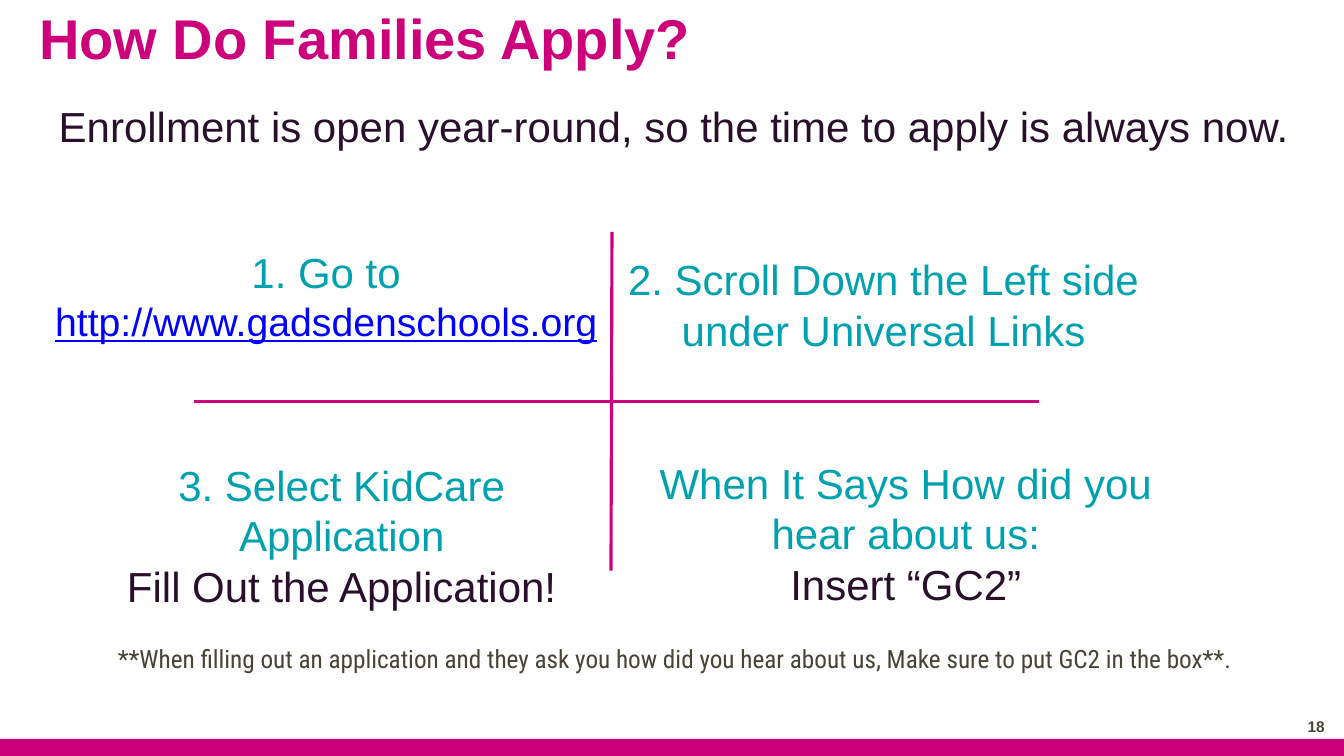
from pptx import Presentation
from pptx.dml.color import RGBColor as RGB
from pptx.enum.shapes import MSO_CONNECTOR as CONN, MSO_SHAPE as SHAPE
from pptx.enum.text import MSO_ANCHOR as ANCHOR, MSO_AUTO_SIZE as AUTO, PP_ALIGN as ALIGN
from pptx.oxml.ns import qn
from pptx.util import Inches, Pt
from lxml import etree

COLORS = {"pink": "CD007B", "plum": "2A0F2C", "teal": "00A1AF",
          "link": "0100FF", "gray": "474337"}


class SlideBuilder:
    font = "Arial"

    def __init__(self, prs):
        self.s = prs.slides.add_slide(prs.slide_layouts[1])

    def color(self, name):
        return RGB.from_string(COLORS[name])

    def fill_text(self, sp, lines, frame=None, para=None, inset=None):
        tf = sp.text_frame
        formats = {"word_wrap": True, "auto_size": AUTO.NONE, **(frame or {})}
        if inset is not None:
            for side in ("left", "top", "right", "bottom"):
                formats[f"margin_{side}"] = Inches(inset)
        for name, value in formats.items():
            setattr(tf, name, value)
        for i, (text, size, color, extra) in enumerate(lines):
            p = tf.add_paragraph() if i else tf.paragraphs[0]
            for name, value in {"alignment": ALIGN.CENTER, "space_before": Pt(0),
                                **(para or {})}.items():
                setattr(p, name, value)
            r = p.add_run()
            r.text = text
            r.font.color.rgb = self.color(color)
            for name, value in {"name": self.font, "size": Pt(size), **extra}.items():
                setattr(r.font, name, value)

    def placeholder(self, sp, box, lines, **formats):
        sp.left, sp.top, sp.width, sp.height = map(Inches, box)
        self.fill_text(sp, lines, inset=0, **formats)

    def body(self, box, lines, **formats):
        sp = self.s.placeholders[1]
        self.placeholder(sp, box, lines, **formats)
        for p in sp.text_frame.paragraphs:
            pPr = p._p.get_or_add_pPr()
            pPr.set("marL", "0")
            pPr.set("indent", "0")
            etree.SubElement(pPr, qn("a:buNone"))

    def text(self, box, lines, **formats):
        sp = self.s.shapes.add_textbox(*map(Inches, box))
        self.fill_text(sp, lines, **formats)

    def bar(self, box, color):
        sp = self.s.shapes.add_shape(SHAPE.RECTANGLE, *map(Inches, box))
        sp.shadow.inherit = False
        sp.fill.solid()
        sp.fill.fore_color.rgb = self.color(color)
        sp.line.fill.background()

    def line(self, ends, color, width):
        sp = self.s.shapes.add_connector(CONN.STRAIGHT, *map(Inches, ends))
        sp.line.color.rgb = self.color(color)
        sp.line.width = Pt(width)
        etree.SubElement(sp._element.spPr, qn("a:effectLst"))


def main():
    prs = Presentation()
    prs.slide_width, prs.slide_height = Inches(13.33), Inches(7.5)
    b = SlideBuilder(prs)

    b.bar((0, 7.33, 13.33, 0.17), "pink")
    b.placeholder(b.s.shapes.title, (0.39, 0.23, 12.59, 0.47),
                  [("How Do Families Apply?", 40, "pink", {"bold": True})],
                  frame={"vertical_anchor": ANCHOR.BOTTOM}, para={"alignment": ALIGN.LEFT})
    b.body((0.39, 1, 12.59, 5.16),
           [("Enrollment is open year-round, so the time to apply is always now.",
             30, "plum", {})], para={"space_after": Pt(12)})
    b.text((12.36, 7.01, 0.78, 0.4), [("18", 11, "gray", {"bold": True})],
           frame={"vertical_anchor": ANCHOR.MIDDLE},
           para={"alignment": ALIGN.RIGHT}, inset=0)

    steps = [
        ((0.38, 2.4, 5.71, 1.3),
         [("1. Go to", 30, "teal", {}),
          ("http://www.gadsdenschools.org", 28, "link", {"underline": True})]),
        ((6.08, 2.47, 5.37, 1.33),
         [("2. Scroll Down the Left side under Universal Links", 30, "teal", {})]),
        ((0.75, 4.51, 5.28, 1.83),
         [("3. Select KidCare Application", 30, "teal", {}),
          ("Fill Out the Application!", 30, "plum", {})]),
        ((6.07, 4.49, 5.83, 1.83),
         [("When It Says How did you hear about us:", 30, "teal", {}),
          ("Insert “GC2”", 30, "plum", {})]),
    ]
    for box, lines in steps:
        b.text(box, lines)

    for ends in ((1.92, 3.98, 10.3, 3.98), (6.06, 5.66, 6.07, 2.3)):
        b.line(ends, "pink", 2.25)
    b.text((1.07, 6.33, 11.47, 0.4),
           [("**When filling out an application and they ask you how did you hear "
             "about us, Make sure to put GC2 in the box**.",
             18, "gray", {"name": "Roboto Condensed"})],
           frame={"word_wrap": False}, para={"alignment": ALIGN.LEFT})

    prs.save("out.pptx")


if __name__ == "__main__":
    main()
